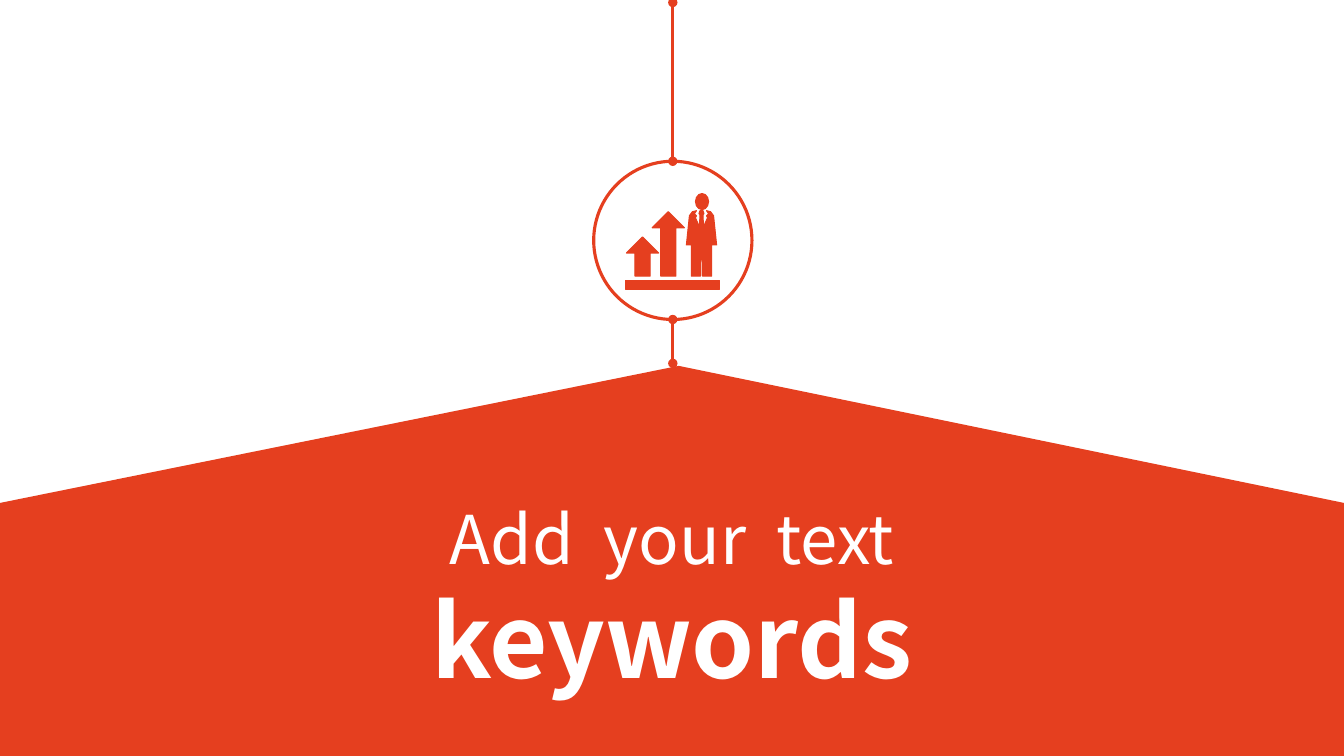
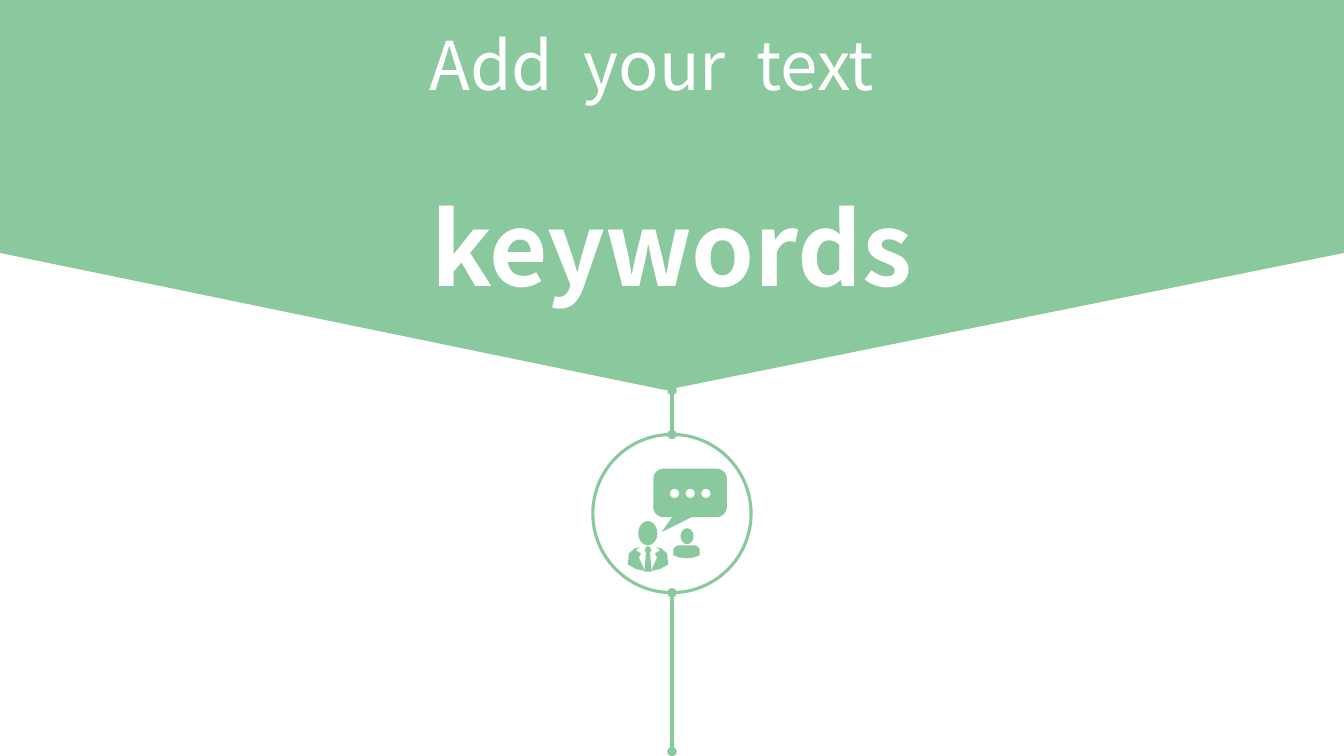
from lxml import etree
from pptx import Presentation
from pptx import util as u
from pptx.dml.color import RGBColor
from pptx.enum import shapes, text
from pptx.oxml import ns

COLORS = {"red": "E53F1F", "green": "8AC99D", "white": "FFFFFF"}
FONT = "Noto Sans CJK JP"
COLUMNS, ROWS = 160, 90
CELL = u.Inches(1 / 12)
RING_RADIUS = 9.42
SHORT_REACH, LONG_REACH = 14.64, 28.32
BAND_TIP, BAND_SIDE = (79.2, 46.44), 30.12


def cells(count):
    return u.Emu(round(count * CELL))


def mirrored(half):
    return half + [(-x, y) for x, y in reversed(half)]


class KeywordDeck:
    def __init__(self):
        self.deck = Presentation()
        self.deck.slide_width = cells(COLUMNS)
        self.deck.slide_height = cells(ROWS)

    def start_page(self, color, center, direction, outline=0):
        self.page = self.deck.slides.add_slide(self.deck.slide_layouts[5])
        self.color = color
        self.center = center
        self.direction = direction
        self.outline = outline

    def style(self, shape, fill, line=0):
        shape.shadow.inherit = False
        if fill:
            shape.fill.solid()
            shape.fill.fore_color.rgb = RGBColor.from_string(COLORS[fill])
        else:
            shape.fill.background()
        if line:
            shape.line.color.rgb = RGBColor.from_string(COLORS[self.color])
            shape.line.width = u.Pt(line)
        else:
            shape.line.fill.background()

    def polygon(self, points, line=0):
        corners = [(cells(x), cells(y)) for x, y in points]
        builder = self.page.shapes.build_freeform(*corners[0])
        builder.add_line_segments(corners[1:], close=True)
        self.style(builder.convert_to_shape(), self.color, line)

    def icon_outline(self, points, middle=0):
        x0, y0 = self.center
        self.polygon([(x0 + middle + x, y0 + y) for x, y in points], self.outline)

    def icon_shape(self, kind, left, top, width, height, fill=None, adjustments=()):
        x0, y0 = self.center
        shape = self.page.shapes.add_shape(
            kind, cells(x0 + left), cells(y0 + top), cells(width), cells(height))
        for index, value in enumerate(adjustments):
            shape.adjustments[index] = value
        self.style(shape, fill or self.color, self.outline)

    def band(self):
        points = [BAND_TIP, (0, BAND_SIDE), (0, 0), (COLUMNS, 0), (COLUMNS, BAND_SIDE)]
        if self.direction > 0:
            points = [(COLUMNS - x, ROWS - y) for x, y in points]
        self.polygon(points)

    def ring(self):
        x, y = self.center
        size = cells(2 * RING_RADIUS)
        ring = self.page.shapes.add_shape(
            shapes.MSO_SHAPE.OVAL, cells(x - RING_RADIUS), cells(y - RING_RADIUS), size, size)
        self.style(ring, None, 2.25)

    def spine(self):
        x, y = self.center
        for side, reach in ((1, SHORT_REACH), (-1, LONG_REACH)):
            step = side * self.direction
            line = self.page.shapes.add_connector(
                shapes.MSO_CONNECTOR.STRAIGHT, cells(x), cells(y + step * RING_RADIUS),
                cells(x), cells(y + step * reach))
            line.line.color.rgb = RGBColor.from_string(COLORS[self.color])
            line.line.width = u.Pt(2.25)
            outline = line.line._get_or_add_ln()
            for end in ("a:headEnd", "a:tailEnd"):
                etree.SubElement(outline, ns.qn(end), type="oval")
            etree.SubElement(line._element.spPr, ns.qn("a:effectLst"))

    def title(self, lines, middle, gap=0, shift=0):
        box = self.page.shapes.title
        box.left, box.top = cells(30 - shift), cells(middle - 18)
        box.width, box.height = cells(100), cells(36)
        box.element.getparent().append(box.element)
        frame = box.text_frame
        frame.word_wrap = True
        frame.auto_size = text.MSO_AUTO_SIZE.NONE
        frame.vertical_anchor = text.MSO_ANCHOR.MIDDLE
        for index, (words, size, bold) in enumerate(lines):
            para = frame.add_paragraph() if index else frame.paragraphs[0]
            para.text = words
            para.alignment = text.PP_ALIGN.CENTER
            if index:
                para.space_before = u.Pt(gap)
                para._p.get_or_add_pPr().set("marL", str(cells(2 * shift)))
            para.font.name = FONT
            para.font.size = u.Pt(size)
            para.font.bold = bold
            para.font.color.rgb = RGBColor.from_string(COLORS["white"])


def draw_growth_icon(deck):
    kinds = shapes.MSO_SHAPE
    for left, top, height in ((-2.46, -3.42, 7.68), (-5.52, -0.42, 4.68)):
        deck.icon_shape(kinds.UP_ARROW, left, top, 3.84, height, adjustments=(0.47, 0.5))
    deck.icon_shape(kinds.RECTANGLE, -5.58, 4.74, 11.16, 1.08)
    deck.icon_shape(kinds.OVAL, 2.7, -5.58, 1.56, 1.92)
    half_suit = [
        (0.18, -3.54), (0.3, -3.18), (0.18, -3.06), (0.24, -1.62), (0.72, -2.7),
        (0.6, -2.94), (0.84, -3.18), (0.6, -3.54), (1.08, -3.42), (1.44, -2.94),
        (1.8, 0.54), (1.2, 0.54), (1.2, 4.26), (0.12, 4.26), (0.06, 0.54)]
    deck.icon_outline(mirrored(half_suit), middle=3.42)


def draw_talk_icon(deck):
    kinds = shapes.MSO_SHAPE
    deck.icon_shape(kinds.OVAL, -4.02, 0.9, 2.28, 2.88)
    jacket = [
        (2.4, 6.06), (2.28, 4.74), (1.56, 4.14), (0.96, 4.02), (1.44, 4.38),
        (0.84, 4.74), (1.08, 5.22), (0.36, 6.84), (1.44, 6.6)]
    for side in (1, -1):
        deck.icon_outline([(side * x, y) for x, y in jacket], middle=-2.85)
    half_tie = [(0.18, 3.9), (0.42, 4.38), (0.24, 4.62), (0.42, 6.9)]
    deck.icon_outline(mirrored(half_tie), middle=-2.85)
    deck.icon_shape(kinds.ROUNDED_RECTANGLE, -2.22, -5.34, 8.76, 5.76, adjustments=(0.21,))
    deck.icon_outline([(0.06, 0.36), (-1.26, 2.22), (2.46, 0.36)])
    for index in range(3):
        deck.icon_shape(kinds.OVAL, -0.24 + 1.87 * index, -2.94, 1.08, 1.08, fill="white")
    deck.icon_shape(kinds.OVAL, 1.02, 1.74, 1.56, 1.92)
    half_shoulders = [
        (0.96, 3.78), (1.38, 3.96), (1.56, 4.26), (1.56, 4.98), (0.84, 5.24), (0, 5.34)]
    deck.icon_outline(mirrored(half_shoulders), middle=1.74)


def main():
    deck = KeywordDeck()
    lines = [("Add  your  text", 48, False), ("keywords", 72, True)]
    pages = [
        (dict(color="red", center=(80.1, 28.62), direction=1, outline=0.75),
         draw_growth_icon, dict(middle=71.16)),
        (dict(color="green", center=(80, 61.14), direction=-1),
         draw_talk_icon, dict(middle=19.62, gap=58, shift=2.4))]
    for look, draw_icon, place in pages:
        deck.start_page(**look)
        deck.band()
        deck.spine()
        deck.ring()
        draw_icon(deck)
        deck.title(lines, **place)
    deck.deck.save("out.pptx")


if __name__ == "__main__":
    main()
